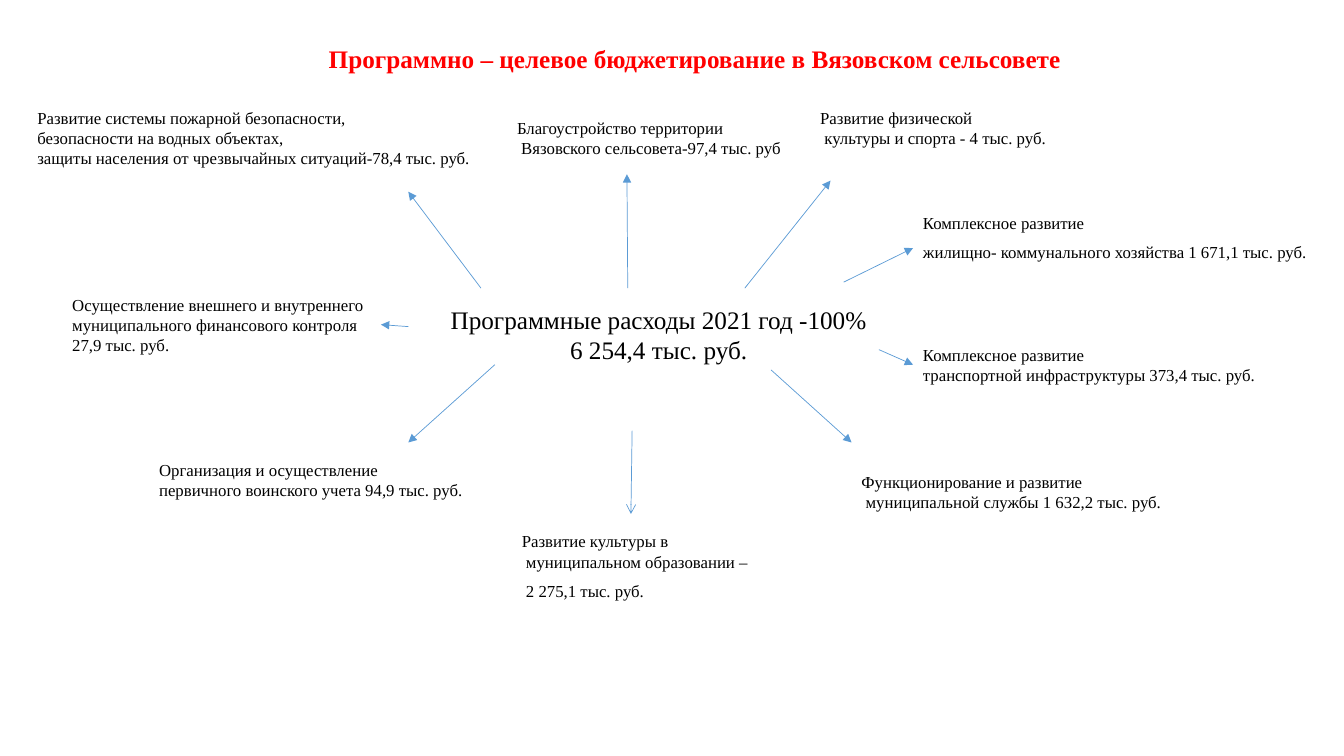
from dataclasses import dataclass

from lxml import etree
from pptx import Presentation
from pptx.dml.color import RGBColor
from pptx.enum.shapes import MSO_CONNECTOR
from pptx.enum.text import MSO_ANCHOR, MSO_AUTO_SIZE, PP_ALIGN
from pptx.oxml.ns import qn
from pptx.util import Cm, Pt

STRAIGHT = MSO_CONNECTOR.STRAIGHT
TOP = MSO_ANCHOR.TOP
FIXED = MSO_AUTO_SIZE.NONE
LEFT, CENTER = PP_ALIGN.LEFT, PP_ALIGN.CENTER


@dataclass(frozen=True)
class Theme:
    font: str = "Times New Roman"
    title: RGBColor = RGBColor(0xFF, 0x00, 0x00)
    text: RGBColor = RGBColor(0x00, 0x00, 0x00)
    arrow: RGBColor = RGBColor(0x5B, 0x9B, 0xD5)
    large: Pt = Pt(18)
    small: Pt = Pt(12)
    arrow_width: Pt = Pt(0.5)
    amount_gap: Pt = Pt(6.5)


theme = Theme()
TITLE = {"name": theme.font, "size": theme.large, "bold": True}
TOTAL = {"name": theme.font, "size": theme.large, "bold": False}
PROGRAM = {"name": theme.font, "size": theme.small, "bold": False}


def write_lines(box, lines, font_format, color, align=LEFT, wrap=True, gap_before_last=False):
    frame = box.text_frame
    for name, value in {"word_wrap": wrap, "auto_size": FIXED, "vertical_anchor": TOP}.items():
        setattr(frame, name, value)
    for index, line in enumerate(lines):
        para = frame.add_paragraph() if index else frame.paragraphs[0]
        para.alignment = align
        span = para.add_run()
        span.text = line
        for name, value in font_format.items():
            setattr(span.font, name, value)
        span.font.color.rgb = color
    if gap_before_last:
        para.space_before = theme.amount_gap


deck = Presentation()
deck.slide_width, deck.slide_height = Cm(33.87), Cm(19.05)
page = deck.slides.add_slide(deck.slide_layouts[5])

title = page.shapes.title
title.left, title.top, title.width, title.height = Cm(8.03), Cm(0.97), Cm(19.3), Cm(1.02)
write_lines(title, ["Программно – целевое бюджетирование в Вязовском сельсовете"],
            TITLE, theme.title, wrap=False)

total = page.shapes.add_textbox(Cm(11.05), Cm(7.54), Cm(11.1), Cm(1.8))
write_lines(total, ["Программные расходы 2021 год -100%", "6 254,4 тыс. руб."],
            TOTAL, theme.text, align=CENTER, wrap=False)

# Left, top, width, height in cm; lines; extra gap above the last line
programs = [
    (0.69, 2.59, 11.43, 1.8, ["Развитие системы пожарной безопасности,",
                              "безопасности на водных объектах,",
                              "защиты населения от чрезвычайных ситуаций-78,4 тыс. руб."], False),
    (12.78, 2.84, 7.39, 1.27, ["Благоустройство территории",
                               " Вязовского сельсовета-97,4 тыс. руб"], False),
    (20.42, 2.59, 6.65, 1.27, ["Развитие физической",
                               " культуры и спорта - 4 тыс. руб."], False),
    (23.01, 5.23, 10.34, 2.06, ["Комплексное развитие",
                                "жилищно- коммунального хозяйства 1 671,1 тыс. руб."], True),
    (23.01, 8.56, 10.06, 1.27, ["Комплексное развитие",
                                "транспортной инфраструктуры 373,4 тыс. руб."], False),
    (21.46, 11.76, 8.1, 1.27, ["Функционирование и развитие",
                               " муниципальной службы 1 632,2 тыс. руб."], False),
    (3.76, 11.46, 9.02, 1.27, ["Организация и осуществление",
                               "первичного воинского учета 94,9 тыс. руб."], False),
    (1.57, 7.29, 8.0, 1.8, ["Осуществление внешнего и внутреннего",
                            "муниципального финансового контроля 27,9 тыс. руб."], False),
    (12.9, 13.26, 6.48, 2.06, ["Развитие культуры в",
                               " муниципальном образовании –",
                               " 2 275,1 тыс. руб."], True),
]
for *place, lines, gap in programs:
    box = page.shapes.add_textbox(*map(Cm, place))
    write_lines(box, lines, PROGRAM, theme.text, gap_before_last=gap)

# Start x, y and end x, y in cm; arrowhead
arrows = [
    (12.12, 7.26, 10.29, 4.83, "triangle"),
    (15.82, 7.26, 15.8, 4.39, "triangle"),
    (18.77, 7.26, 20.93, 4.55, "triangle"),
    (21.26, 7.11, 23.01, 6.25, "triangle"),
    (22.15, 8.81, 23.01, 9.19, "triangle"),
    (10.29, 8.23, 9.6, 8.18, "triangle"),
    (12.47, 9.19, 10.29, 11.15, "triangle"),
    (19.43, 9.32, 21.46, 11.15, "triangle"),
    (15.93, 10.85, 15.9, 12.95, "arrow"),
]
for *ends, head in arrows:
    arrow = page.shapes.add_connector(STRAIGHT, *map(Cm, ends))
    arrow.line.color.rgb = theme.arrow
    arrow.line.width = theme.arrow_width
    properties = arrow.element.spPr
    etree.SubElement(properties.find(qn("a:ln")), qn("a:tailEnd"), type=head)
    etree.SubElement(properties, qn("a:effectLst"))

deck.save("out.pptx")
